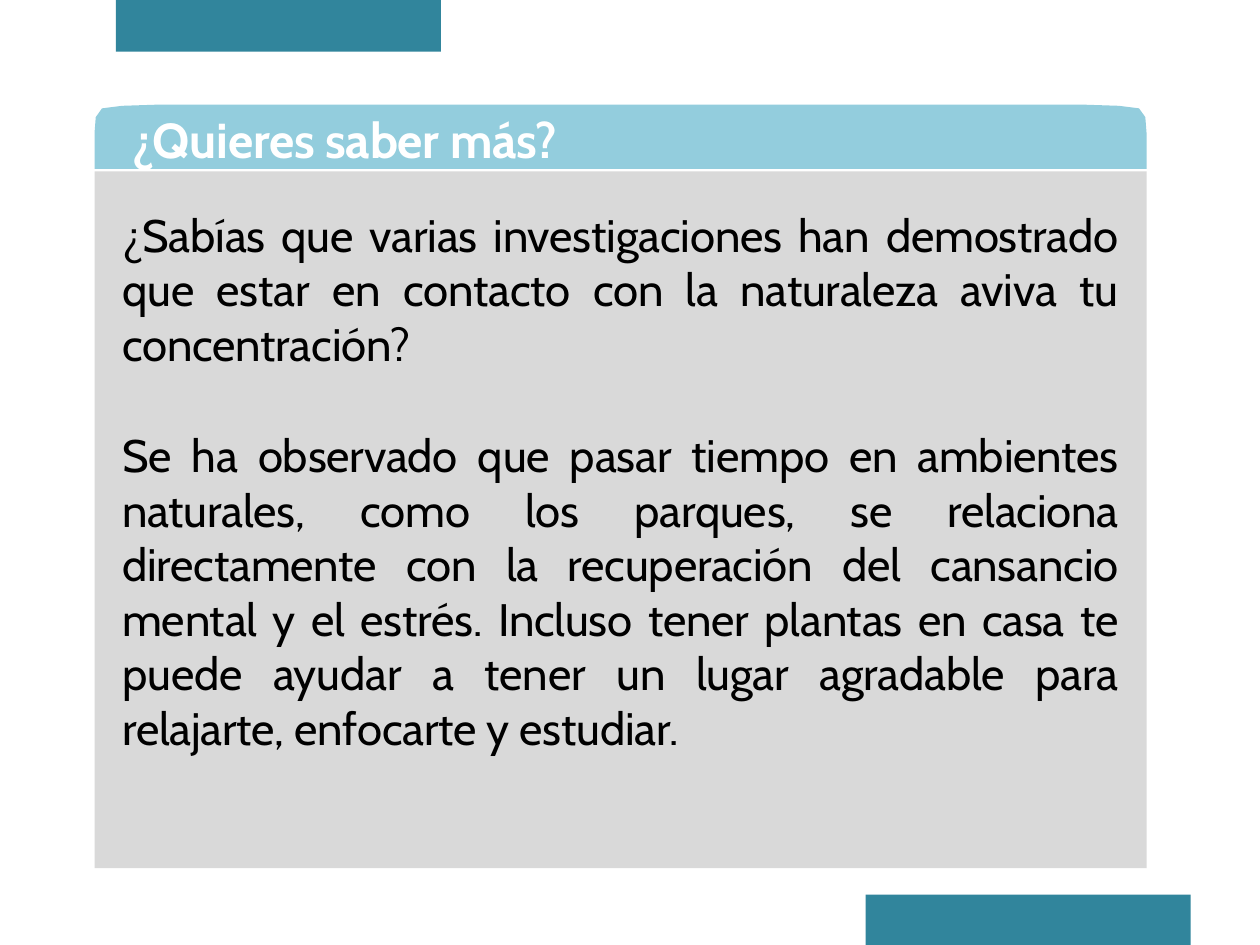
import pptx
import pptx.util
import pptx.dml.color
import pptx.enum.shapes
import pptx.enum.text

WIDE, HIGH = 10, 7.5
LEFT, SPAN = 0.75, 8.35
TOP, BASE = 0.83, 1.34
FONT = "Cabin"

BLOCKS = [
    (0.92, -0.01, 2.58, 0.42, "31859C"),
    (6.87, 7.1, 2.58, 0.42, "31859C"),
    (LEFT, 1.36, SPAN, 5.53, "D9D9D9"),
]
CORNER = [(0, 0.51), (0, 0.23), (0.01, 0.1), (0.06, 0.03), (0.22, 0.01), (0.52, 0)]
TITLE = ["¿Quieres saber más?"]
BODY = [
    "¿Sabías que varias investigaciones han demostrado que estar en contacto "
    "con la naturaleza aviva tu concentración?",
    "Se ha observado que pasar tiempo en ambientes naturales, como los parques, "
    "se relaciona directamente con la recuperación del cansancio mental y el "
    "estrés. Incluso tener plantas en casa te puede ayudar a tener un lugar "
    "agradable para relajarte, enfocarte y estudiar.",
]
ALIGN = pptx.enum.text.PP_ALIGN
inch = pptx.util.Inches


def tint(code):
    return pptx.dml.color.RGBColor.from_string(code)


def paint(shape, code):
    shape.shadow.inherit = False
    shape.fill.solid()
    shape.fill.fore_color.rgb = tint(code)
    shape.line.fill.background()


def write(slide, box, paras, size, code, bold, align, inset, gaps, indent=0):
    frame = slide.shapes.add_textbox(*map(inch, box)).text_frame
    frame.word_wrap = True
    frame.margin_left = frame.margin_right = frame.margin_bottom = 0
    frame.margin_top = inch(inset)
    for i, (text, gap) in enumerate(zip(paras, gaps)):
        para = frame.add_paragraph() if i else frame.paragraphs[0]
        para.alignment = align
        para.space_before = pptx.util.Pt(gap)
        para._p.get_or_add_pPr().set("marL", str(inch(indent)))
        run = para.add_run()
        run.text = text
        font = run.font
        font.name, font.size, font.bold = FONT, pptx.util.Pt(size), bold
        font.color.rgb = tint(code)
        run._r.get_or_add_rPr().set("spc", "-10")


deck = pptx.Presentation()
deck.slide_width, deck.slide_height = inch(WIDE), inch(HIGH)
slide = deck.slides.add_slide(deck.slide_layouts[6])

for *box, code in BLOCKS:
    rect = pptx.enum.shapes.MSO_SHAPE.RECTANGLE
    paint(slide.shapes.add_shape(rect, *map(inch, box)), code)

near = [(LEFT + x, TOP + y) for x, y in CORNER]
far = [(LEFT + SPAN - x, TOP + y) for x, y in reversed(CORNER)]
start, *rest = [(inch(x), inch(y)) for x, y in near + far]
form = slide.shapes.build_freeform(*start)
form.add_line_segments(rest, close=True)
paint(form.convert_to_shape(), "93CDDD")

write(slide, (1.03, 0.85, 5.63, BASE - 0.85), TITLE, 28, "FFFFFF", True,
      ALIGN.LEFT, 0.02, [1.2], 0.02)
write(slide, (0.97, 1.57, 7.91, 4.47), BODY, 26, "000000", False,
      ALIGN.JUSTIFY, 0.07, [1, 32.5])

deck.save("out.pptx")
